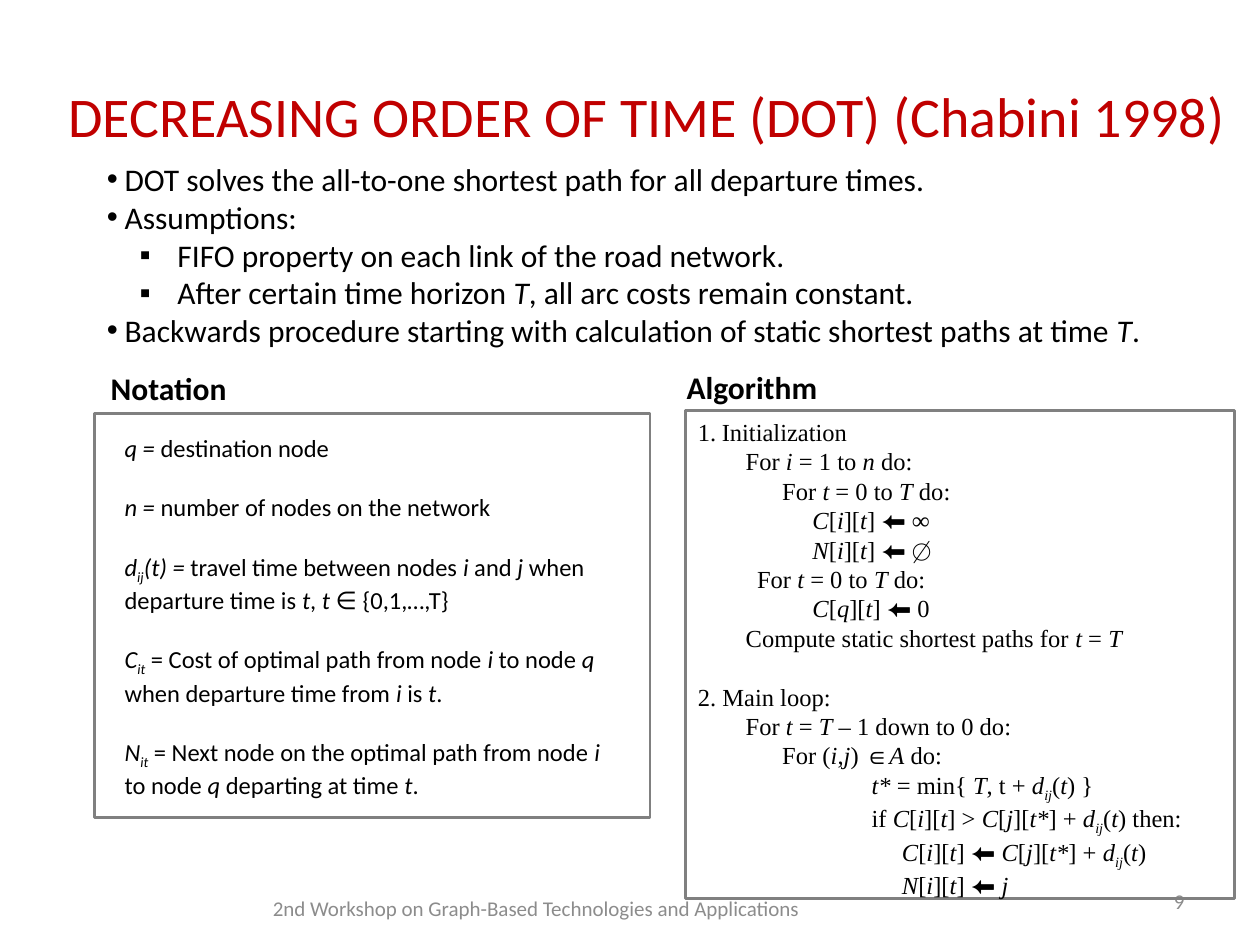
from lxml import etree
from pptx import Presentation
from pptx import util as u
from pptx.dml.color import RGBColor
from pptx.enum import shapes, text
from pptx.oxml.ns import qn

HUES = {"title": "C00000", "body": "000000", "foot": "8C8C8C", "edge": "808080"}
COLS, ROWS = 100, 75

deck = Presentation()
deck.slide_width, deck.slide_height = u.Inches(10), u.Inches(7.5)
col, row = deck.slide_width / COLS, deck.slide_height / ROWS
slide = deck.slides.add_slide(deck.slide_layouts[6])


def place(spot, frame=False):
    """Add a text box, or an outlined box, at a spot given in columns and rows."""
    x, y, w, h = spot
    area = [int(n) for n in (x * col, y * row, w * col, h * row)]
    if not frame:
        return slide.shapes.add_textbox(*area)
    box = slide.shapes.add_shape(shapes.MSO_SHAPE.RECTANGLE, *area)
    box.shadow.inherit = False
    box.fill.background()
    box.line.color.rgb = RGBColor.from_string(HUES["edge"])
    box.line.width = u.Pt(1.5)
    return box


def write(box, lines, size=14, face="Calibri", hue="body", bold=False,
          align="LEFT", anchor="TOP"):
    """Fill a box with (markup, left, hang, bullet, gap) lines.

    ~ switches italic on and off, _ switches subscript on and off.
    """
    frame = box.text_frame
    frame.word_wrap = True
    frame.vertical_anchor = getattr(text.MSO_ANCHOR, anchor)
    look = {"size": u.Pt(size), "name": face, "bold": bold}
    for k, (mark, left, hang, dot, gap) in enumerate(lines):
        para = frame.paragraphs[0] if k == 0 else frame.add_paragraph()
        para.alignment = getattr(text.PP_ALIGN, align)
        para.space_before = u.Pt(gap)
        props = para._p.get_or_add_pPr()
        props.set("marL", str(int(left * col)))
        props.set("indent", str(int(-hang * col)))
        if dot == "1.":
            etree.SubElement(props, qn("a:buAutoNum"), type="arabicPeriod")
        elif dot:
            etree.SubElement(props, qn("a:buFont"), typeface="Arial")
            etree.SubElement(props, qn("a:buChar"), char=dot)
        for i, part in enumerate(mark.split("~")):
            for j, bit in enumerate(part.split("_")):
                if not bit:
                    continue
                run = para.add_run()
                run.text = bit
                for key, val in look.items():
                    setattr(run.font, key, val)
                run.font.italic = i % 2 == 1
                run.font.color.rgb = RGBColor.from_string(HUES[hue])
                if j % 2:
                    run._r.get_or_add_rPr().set("baseline", "-25000")


# Title, headings and footer
labels = [
    ((2.7, 2.9, 97.3, 12.5), "DECREASING ORDER OF TIME (DOT) (Chabini 1998)",
     dict(size=32, hue="title", align="CENTER", anchor="MIDDLE")),
    ((19.3, 70.6, 46.5, 2.9),
     "2nd Workshop on Graph-Based Technologies and Applications",
     dict(size=12, hue="foot", align="CENTER", anchor="MIDDLE")),
    ((71.7, 69.5, 23.3, 4), "9",
     dict(size=12, hue="foot", align="RIGHT", anchor="MIDDLE")),
    ((7.8, 28.8, 22.5, 4), "Notation", dict(size=18, bold=True)),
    ((53.5, 28.7, 22.5, 4), "Algorithm", dict(size=18, bold=True)),
]
for spot, words, style in labels:
    write(place(spot), [(words, 0, 0, None, 0)], **style)

# Key points
main, sub = (1.4, 1.4, "•", 0), (5.6, 3, "▪", 0)
points = [
    ("DOT solves the all-to-one shortest path for all departure times.", main),
    ("Assumptions:", main),
    ("FIFO property on each link of the road network.", sub),
    ("After certain time horizon ~T~, all arc costs remain constant.", sub),
    ("Backwards procedure starting with calculation of static shortest paths "
     "at time ~T~.", main),
]
write(place((7.5, 12.2, 92.5, 16.2)), [(m, *lay) for m, lay in points], size=18)

# Notation
terms = [
    "~q = ~destination node",
    "~n = ~number of nodes on the network",
    "~d_ij_(t) = ~travel time between nodes ~i~ and ~j ~when departure time is "
    "~t~, ~t ~∈ {0,1,…,T}",
    "~C_it_~ = Cost of optimal path from node ~i ~to node ~q ~when departure "
    "time from ~i ~is ~t~.",
    "~N_it_~ = Next node on the optimal path from node ~i ~to node ~q ~departing "
    "at time ~t~.",
]
write(place((8.9, 33.9, 39.9, 29.3)),
      [(m, 0, 0, None, 17 if k else 0) for k, m in enumerate(terms)])
place((7.5, 32.8, 44.1, 32.1), frame=True)

# Algorithm: each step with its left margin in columns
steps = [
    ("Initialization", 1.9),
    ("For ~i~ = 1 to ~n~ do:", 3.8),
    ("For ~t~ = 0 to ~T~ do:", 6.7),
    ("~C~[~i~][~t~] ⬅ ~∞~", 9.1),
    ("~N~[~i~][~t~] ⬅ ∅", 9.1),
    ("For ~t~ = 0 to ~T~ do:", 4.7),
    ("~C~[~q~][~t~] ⬅ 0", 9.1),
    ("Compute static shortest paths for ~t~ = ~T~", 3.8),
    ("2. Main loop:", 0),
    ("For ~t~ = ~T~ – 1 down to 0 do:", 3.8),
    ("For (~i~,~j~) ∈~A~ do:", 6.7),
    ("~t*~ = min{ ~T~, t + ~d_ij_~(~t~) }", 13.8),
    ("if ~C~[~i~][~t~] > ~C~[~j~][~t*~] + ~d_ij_~(~t~) then:", 13.8),
    ("~C~[~i~][~t~] ⬅ ~C~[~j~][~t*~] + ~d_ij_~(~t~)", 16.2),
    ("~N~[~i~][~t~] ⬅ ~j~", 16.2),
]
code = []
for k, (mark, left) in enumerate(steps):
    first = k == 0
    gap = 16.8 if mark.startswith("2.") else 0
    code.append((mark, left, left if first else 0, "1." if first else None, gap))
write(place((54.4, 32.6, 43.6, 38.7), frame=True), code, face="Times New Roman")

deck.save("out.pptx")
